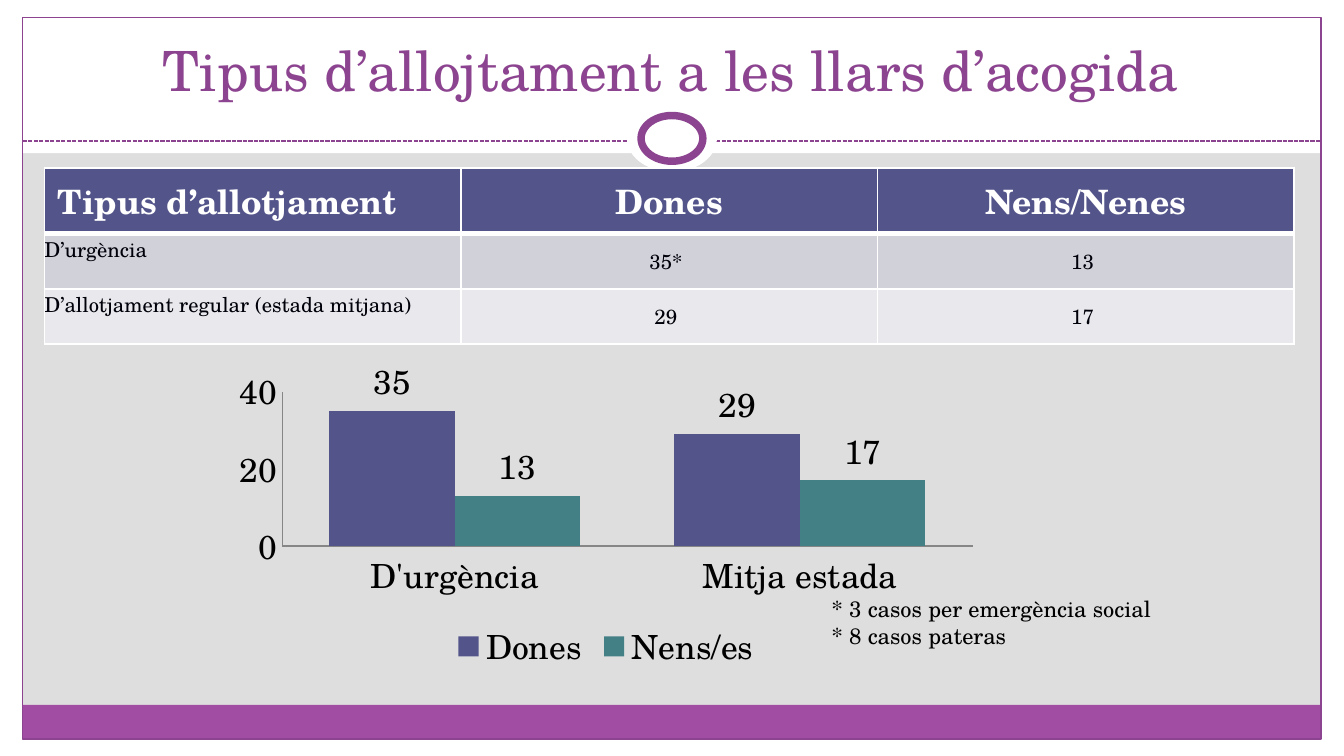
from lxml import etree
from pptx import Presentation
from pptx.chart.data import CategoryChartData
from pptx.dml.color import RGBColor
from pptx.enum.chart import XL_CHART_TYPE, XL_LABEL_POSITION, XL_LEGEND_POSITION, XL_TICK_MARK
from pptx.enum.dml import MSO_LINE
from pptx.enum.shapes import MSO_CONNECTOR, MSO_SHAPE
from pptx.enum.text import MSO_ANCHOR, PP_ALIGN
from pptx.oxml.ns import qn
from pptx.util import Inches, Pt

FONT = "TeX Gyre Schola"
WHITE = RGBColor(0xFF, 0xFF, 0xFF)
BLACK = RGBColor(0, 0, 0)
INK = RGBColor(0, 0, 0x0A)
GREY = RGBColor(0xDE, 0xDE, 0xDE)
AXIS = RGBColor(0x86, 0x86, 0x86)
PLUM = RGBColor(0x8D, 0x44, 0x90)
PURPLE = RGBColor(0xA0, 0x4D, 0xA3)
INDIGO = RGBColor(0x53, 0x54, 0x8A)
TEAL = RGBColor(0x43, 0x80, 0x86)
BANDS = [RGBColor(0xD1, 0xD1, 0xDA), RGBColor(0xE9, 0xE9, 0xED)]

SLIDE_WIDTH = 10
SLIDE_HEIGHT = SLIDE_WIDTH * 9 / 16
ROWS = [
    ["Tipus d’allotjament", "Dones", "Nens/Nenes"],
    ["D’urgència", "35*", "13"],
    ["D’allotjament regular (estada mitjana)", "29", "17"],
]
ROW_HEIGHTS = [0.49, 0.41, 0.41]
SERIES = [("Dones", (35, 29), INDIGO), ("Nens/es", (13, 17), TEAL)]


def set_attributes(target, values):
    for name, value in values.items():
        setattr(target, name, value)


def style_font(font, size, color, bold=False):
    set_attributes(font, {"name": FONT, "size": Pt(size), "bold": bold})
    font.color.rgb = color


def add_panel(slide, box, fill=None, line=None, width=0.75, kind=MSO_SHAPE.RECTANGLE):
    panel = slide.shapes.add_shape(kind, *map(Inches, box))
    panel.shadow.inherit = False
    if fill is None:
        panel.fill.background()
    else:
        panel.fill.solid()
        panel.fill.fore_color.rgb = fill
    if line is None:
        panel.line.fill.background()
    else:
        panel.line.color.rgb = line
        panel.line.width = Pt(width)


def add_text(slide, box, lines, size, color, align, anchor):
    frame = slide.shapes.add_textbox(*map(Inches, box)).text_frame
    set_attributes(frame, {"word_wrap": True, "vertical_anchor": anchor})
    frame.text = "\n".join(lines)
    for paragraph in frame.paragraphs:
        paragraph.alignment = align
        style_font(paragraph.runs[0].font, size, color)


def add_background(slide, box):
    left, top, width, height = box
    margin, header = 0.17, 1.14
    inner = width - 2 * margin
    right, bottom = left + width, top + height
    slide.background.fill.solid()
    slide.background.fill.fore_color.rgb = GREY
    for edge in (
        (left, bottom - 0.12, width, 0.12),
        (left, top, width, header),
        (left, top, margin, height),
        (right - margin, top, margin, height),
    ):
        add_panel(slide, edge, WHITE)
    add_panel(slide, (left + margin, bottom - 0.38, inner, 0.25), PURPLE)
    add_panel(slide, (left + margin, top + 0.13, inner, 5.37), line=PLUM)

    rule_y = Inches(top + 1.05)
    rule = slide.shapes.add_connector(
        MSO_CONNECTOR.STRAIGHT, Inches(left + margin), rule_y, Inches(right - margin), rule_y)
    rule.line.color.rgb = PLUM
    set_attributes(rule.line, {"width": Pt(0.75), "dash_style": MSO_LINE.SQUARE_DOT})
    etree.SubElement(rule._element.spPr, qn("a:effectLst"))

    center_x, center_y = left + width / 2, top + 1.03
    for ring_width, ring_height, line in ((0.67, 0.5, None), (0.46, 0.34, PLUM)):
        ring = (center_x - ring_width / 2, center_y - ring_height / 2, ring_width, ring_height)
        add_panel(slide, ring, WHITE, line, 4, MSO_SHAPE.OVAL)


def add_border(cell, side, width):
    border = etree.SubElement(cell._tc.get_or_add_tcPr(), qn(f"a:ln{side}"), w=str(Pt(width)))
    fill = etree.SubElement(border, qn("a:solidFill"))
    etree.SubElement(fill, qn("a:srgbClr"), val=str(WHITE))


def add_lodging_table(slide, box):
    table = slide.shapes.add_table(len(ROWS), len(ROWS[0]), *map(Inches, box)).table
    for column in table.columns:
        column.width = Inches(box[2] / len(ROWS[0]))
    for row, height in zip(table.rows, ROW_HEIGHTS):
        row.height = Inches(height)
    for r, texts in enumerate(ROWS):
        for c, text in enumerate(texts):
            cell = table.cell(r, c)
            cell.text = text
            paragraph = cell.text_frame.paragraphs[0]
            paragraph.alignment = PP_ALIGN.CENTER if c else PP_ALIGN.LEFT
            for side in "LRTB":
                add_border(cell, side, 3 if (r, side) in ((0, "B"), (1, "T")) else 1)
            cell.fill.solid()
            if r == 0:
                cell.fill.fore_color.rgb = INDIGO
                style_font(paragraph.runs[0].font, 18, WHITE, True)
            else:
                cell.fill.fore_color.rgb = BANDS[r - 1]
                style_font(paragraph.runs[0].font, 11, INK)
                set_attributes(cell, {
                    "margin_left": 0, "margin_top": 0,
                    "margin_right": Inches(0.05), "margin_bottom": 0,
                    "vertical_anchor": MSO_ANCHOR.MIDDLE if c else MSO_ANCHOR.TOP,
                })


def add_lodging_chart(slide, box):
    data = CategoryChartData()
    data.categories = ["D'urgència", "Mitja estada"]
    for name, values, _ in SERIES:
        data.add_series(name, values)
    chart = slide.shapes.add_chart(
        XL_CHART_TYPE.COLUMN_CLUSTERED, *map(Inches, box), data).chart
    style_font(chart.font, 18, BLACK)
    set_attributes(chart, {"has_title": False, "has_legend": True})
    set_attributes(chart.legend, {
        "position": XL_LEGEND_POSITION.BOTTOM, "include_in_layout": False})
    for axis in (chart.category_axis, chart.value_axis):
        set_attributes(axis, {
            "major_tick_mark": XL_TICK_MARK.NONE, "minor_tick_mark": XL_TICK_MARK.NONE,
            "has_major_gridlines": False})
        axis.format.line.color.rgb = AXIS
        axis.format.line.width = Pt(0.75)
    set_attributes(chart.value_axis, {
        "minimum_scale": 0, "maximum_scale": 40, "major_unit": 20})
    plot = chart.plots[0]
    set_attributes(plot, {
        "gap_width": 75, "overlap": 0, "vary_by_categories": False, "has_data_labels": True})
    set_attributes(plot.data_labels, {
        "show_value": True, "position": XL_LABEL_POSITION.OUTSIDE_END})
    for series, (_, _, color) in zip(plot.series, SERIES):
        series.format.fill.solid()
        series.format.fill.fore_color.rgb = color


def main():
    presentation = Presentation()
    set_attributes(presentation, {
        "slide_width": Inches(SLIDE_WIDTH), "slide_height": Inches(SLIDE_HEIGHT)})
    slide = presentation.slides.add_slide(presentation.slide_layouts[6])
    add_background(slide, (0, 0, SLIDE_WIDTH, SLIDE_HEIGHT))
    add_text(slide, (0.33, 0.19, 9.33, 0.62), ["Tipus d’allojtament a les llars d’acogida"],
             29.7, PLUM, PP_ALIGN.CENTER, MSO_ANCHOR.BOTTOM)
    add_lodging_table(slide, (0.33, 1.25, 9.3, sum(ROW_HEIGHTS)))
    add_lodging_chart(slide, (1.67, 2.66, 5.68, 2.38))
    add_text(slide, (6.09, 4.38, 3.12, 0.5),
             ["* 3 casos per emergència social", "* 8 casos pateras"],
             12, BLACK, PP_ALIGN.LEFT, MSO_ANCHOR.TOP)
    presentation.save("out.pptx")


if __name__ == "__main__":
    main()
